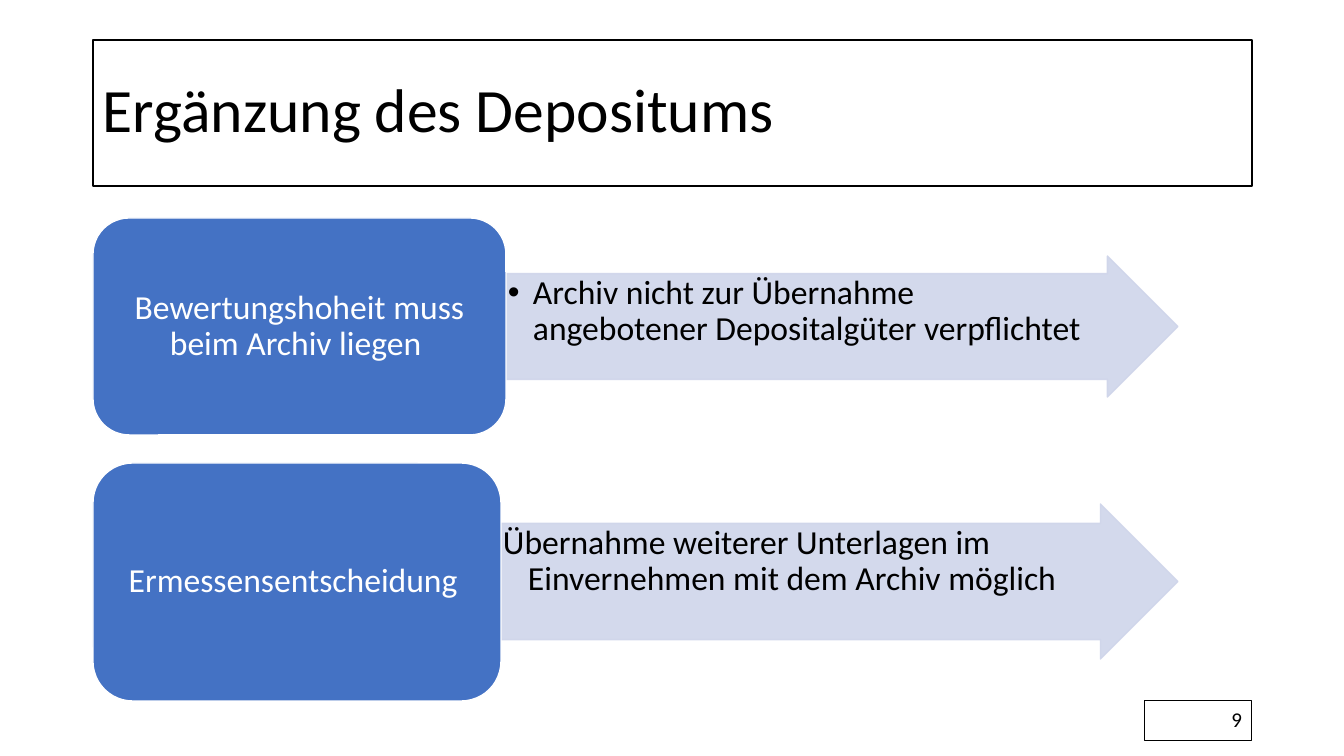
"""Build the slide on adding to a deposit: two labels, each with an arrow."""
from lxml.etree import SubElement
from pptx import Presentation
from pptx.dml.color import RGBColor
from pptx.enum.shapes import MSO_SHAPE as Shape
from pptx.enum.text import MSO_ANCHOR as Anchor, PP_ALIGN as Align
from pptx.oxml.ns import qn
from pptx.util import Emu, Pt

BLACK = RGBColor(0x00, 0x00, 0x00)
WHITE = RGBColor(0xFF, 0xFF, 0xFF)
BLUE = RGBColor(0x44, 0x72, 0xC4)
PALE = RGBColor(0xCF, 0xD5, 0xEA)

TITLE = "Ergänzung des Depositums"
PAGE_NUMBER = "9"
ROWS = [
    {"label": "Bewertungshoheit muss beim Archiv liegen ",
     "detail": "Archiv nicht zur Übernahme angebotener Depositalgüter verpflichtet",
     "bullet": True, "top": 218, "width": 413, "height": 217},
    {"label": "Ermessensentscheidung ",
     "detail": "Übernahme weiterer Unterlagen im Einvernehmen mit dem Archiv möglich",
     "bullet": False, "top": 463, "width": 408, "height": 238},
]

LEFT = 93
TITLE_RIGHT = 1252
ARROW_RIGHT = 1178
ARROW_SHARE = 0.65
INDENT = 25


def px(count):
    return Emu(round(count * 914400 / 100.8))


def set_opacity(color_parent, percent):
    color = next(color_parent.iter(qn("a:srgbClr")))
    SubElement(color, qn("a:alpha"), val=str(percent * 1000))


def add_box(page, kind, area, fill, line, width=1.0):
    box = page.shapes.add_shape(kind, *(px(length) for length in area))
    box.shadow.inherit = False
    box.fill.solid()
    box.fill.fore_color.rgb = fill
    box.line.color.rgb = line
    box.line.width = Pt(width)
    return box


def write(box, text, size, color, align, anchor=Anchor.MIDDLE, spacing=0.9):
    frame = box.text_frame
    frame.word_wrap = True
    frame.vertical_anchor = anchor
    para = frame.paragraphs[0]
    para.alignment = align
    para.line_spacing = spacing
    span = para.add_run()
    span.text = text
    span.font.name = "Calibri"
    span.font.size = Pt(size)
    span.font.color.rgb = color
    return para


def add_framed_text(page, area, width, text, size, align):
    box = add_box(page, Shape.RECTANGLE, area, WHITE, BLACK, width)
    set_opacity(box.fill._xPr.find(qn("a:solidFill")), 75)
    write(box, text, size, BLACK, align)


def add_arrow(page, row):
    left = LEFT + row["width"]
    height = round(row["height"] * ARROW_SHARE)
    top = row["top"] + (row["height"] - height) // 2
    area = (left, top, ARROW_RIGHT - left, height)
    arrow = add_box(page, Shape.RIGHT_ARROW, area, PALE, PALE)
    arrow.adjustments[0] = 0.75
    arrow.adjustments[1] = 0.5
    set_opacity(arrow.fill._xPr.find(qn("a:solidFill")), 90)
    set_opacity(arrow.line._ln, 90)

    para = write(arrow, row["detail"], 24, BLACK, Align.LEFT, Anchor.TOP)
    frame = arrow.text_frame
    frame.margin_left = frame.margin_top = frame.margin_bottom = px(2)
    frame.margin_right = px(37)
    properties = para._p.get_or_add_pPr()
    properties.set("marL", str(px(INDENT)))
    properties.set("indent", str(-px(INDENT)))
    if row["bullet"]:
        SubElement(properties, qn("a:buFont"), typeface="Arial")
        SubElement(properties, qn("a:buChar"), char="•")
    else:
        SubElement(properties, qn("a:buNone"))


def add_label(page, row):
    area = (LEFT, row["top"], row["width"], row["height"])
    label = add_box(page, Shape.ROUNDED_RECTANGLE, area, BLUE, WHITE)
    write(label, row["label"], 24, WHITE, Align.CENTER)


def main():
    deck = Presentation()
    deck.slide_width, deck.slide_height = px(1344), px(756)
    page = deck.slides.add_slide(deck.slide_layouts[6])
    add_framed_text(page, (LEFT, 40, TITLE_RIGHT - LEFT, 146), 1,
                    TITLE, 44, Align.LEFT)
    add_framed_text(page, (1145, 701, TITLE_RIGHT - 1145, 40), 0.75,
                    PAGE_NUMBER, 15, Align.RIGHT)
    for row in ROWS:
        add_arrow(page, row)
        add_label(page, row)
    deck.save("out.pptx")


if __name__ == "__main__":
    main()
